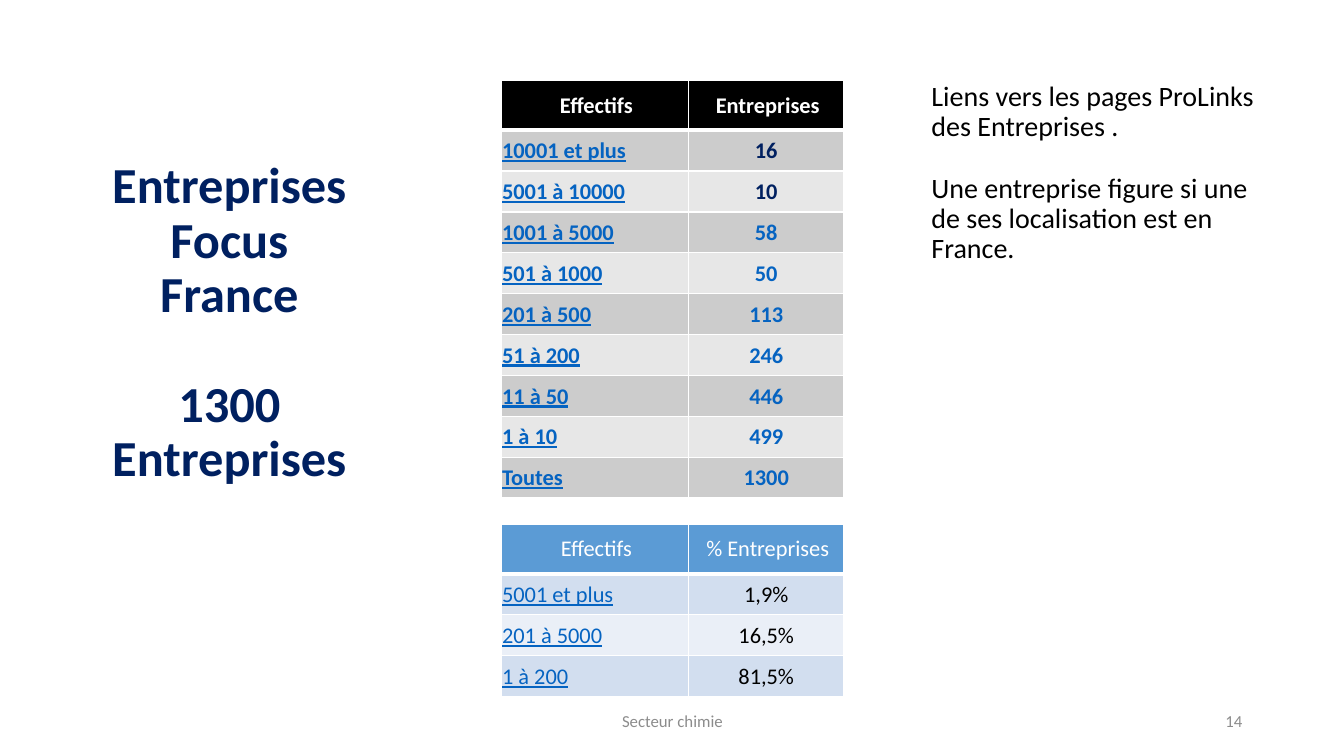
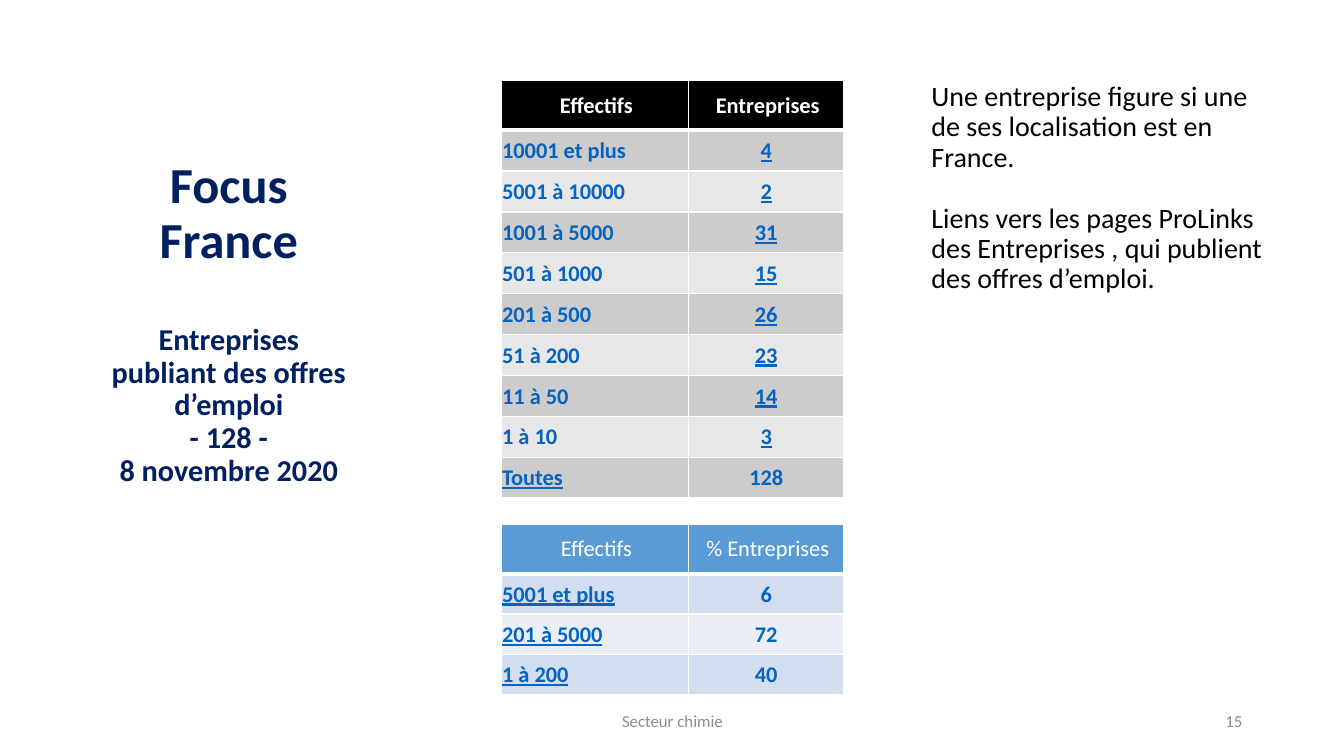
from dataclasses import dataclass

from lxml.etree import SubElement
from pptx import Presentation
from pptx.dml.color import RGBColor
from pptx.enum.text import MSO_ANCHOR as Anchor, PP_ALIGN as Align
from pptx.oxml.ns import qn
from pptx.util import Inches, Pt


@dataclass(frozen=True)
class Theme:
    font: str = "Calibri"
    navy: str = "002060"
    link: str = "0563C1"
    black: str = "000000"
    white: str = "FFFFFF"
    grey: str = "8C8C8C"
    blue: str = "5B9BD5"
    grey_bands: tuple = ("CCCCCC", "E7E7E7")
    blue_bands: tuple = ("D2DEEF", "EAEFF7")
    title: float = 36
    subtitle: float = 21.6
    body: float = 20
    table: float = 16
    footer: float = 12
    line_spacing: float = 0.9


THEME = Theme()

SIZES = ["10001 et plus", "5001 à 10000", "1001 à 5000", "501 à 1000", "201 à 500",
         "51 à 200", "11 à 50", "1 à 10", "Toutes"]
GROUPS = ["5001 et plus", "201 à 5000", "1 à 200"]
LABEL, VALUE = 0, 1  # table columns, also naming the underlined one in a row

SLIDES = [
    {
        "number": 14,
        "title": ["Entreprises", "Focus", "France"],
        "subtitle": ["1300", "Entreprises"],
        "subtitle_size": THEME.title,
        "title_box": (0.69, 1.54, 3.17, 4.77),
        "notes": ["Liens vers les pages ProLinks des Entreprises .",
                  "Une entreprise figure si une de ses localisation est en France."],
        "counts": [16, 10, 58, 50, 113, 246, 446, 499, 1300],
        "underlined": [LABEL] * 9,
        "count_colors": [THEME.navy] * 2 + [THEME.link] * 7,
        "shares": ["1,9%", "16,5%", "81,5%"],
        "share_color": THEME.black,
        "share_bold": False,
        "share_height": 1.71,
    },
    {
        "number": 15,
        "title": ["Focus", "France"],
        "subtitle": ["Entreprises", "publiant des offres d’emploi", "- 128 -",
                     "8 novembre 2020"],
        "subtitle_size": THEME.subtitle,
        "title_box": (0.46, 1.54, 3.62, 4.77),
        "notes": ["Une entreprise figure si une de ses localisation est en France.",
                  "Liens vers les pages ProLinks des Entreprises , qui publient "
                  "des offres d’emploi."],
        "counts": [4, 2, 31, 15, 26, 23, 14, 3, 128],
        "underlined": [VALUE] * 8 + [LABEL],
        "count_colors": [THEME.link] * 9,
        "shares": [6, 72, 40],
        "share_color": THEME.link,
        "share_bold": True,
        "share_height": 1.69,
    },
]

TABLE_LEFT = 4.97
COLUMN_WIDTHS = (1.86, 1.54)
HEADER_HEIGHT = 0.49
HEADER_MARGINS = (0.14, 0.11, 0.11, 0.11)
BODY_MARGINS = (0.01, 0.01, 0.01, 0)
FOOTER = "Secteur chimie"


def format_paragraph(paragraph, size, color, bold=False, underline=False, align=Align.LEFT):
    paragraph.alignment = align
    for run in paragraph.runs:
        font = run.font
        font.name, font.size = THEME.font, Pt(size)
        font.bold, font.underline = bold, underline
        font.color.rgb = RGBColor.from_string(color)


def blank_line(size):
    """Height of one empty line at the shared line spacing."""
    return Pt(round(size * 1.22 * THEME.line_spacing, 1))


def write_lines(frame, lines, **style):
    """Write (text, size, space before) lines as paragraphs."""
    frame.word_wrap = True
    frame.vertical_anchor = Anchor.TOP
    frame.text = "\n".join(text for text, _, _ in lines)
    for paragraph, (_, size, before) in zip(frame.paragraphs, lines):
        paragraph.line_spacing = THEME.line_spacing
        paragraph.space_before = before
        format_paragraph(paragraph, size, **style)


def add_title(slide, content):
    title = slide.shapes.title
    title.left, title.top, title.width, title.height = map(Inches, content["title_box"])
    lines = [(text, THEME.title, Pt(0)) for text in content["title"]]
    for index, text in enumerate(content["subtitle"]):
        before = Pt(0) if index else blank_line(THEME.title)
        lines.append((text, content["subtitle_size"], before))
    write_lines(title.text_frame, lines, color=THEME.navy, bold=True, align=Align.CENTER)


def add_notes(slide, notes):
    box = slide.shapes.add_textbox(*map(Inches, (9.14, 0.77, 3.5, 4.77)))
    lines = [(text, THEME.body, blank_line(THEME.body) if index else Pt(0))
             for index, text in enumerate(notes)]
    write_lines(box.text_frame, lines, color=THEME.black)


def add_footer(slide, number):
    for text, left, width, align in ((FOOTER, 4.42, 4.5, Align.CENTER),
                                     (str(number), 9.42, 3, Align.RIGHT)):
        box = slide.shapes.add_textbox(*map(Inches, (left, 6.95, width, 0.4)))
        frame = box.text_frame
        frame.word_wrap, frame.vertical_anchor = True, Anchor.MIDDLE
        frame.text = text
        format_paragraph(frame.paragraphs[0], THEME.footer, THEME.grey, align=align)


def set_borders(cell, bottom):
    properties = cell._tc.get_or_add_tcPr()
    widths = {"a:lnL": 1, "a:lnR": 1, "a:lnT": 1, "a:lnB": bottom}
    for index, (tag, width) in enumerate(widths.items()):
        line = SubElement(properties, qn(tag), w=str(Pt(width)))
        fill = SubElement(line, qn("a:solidFill"))
        SubElement(fill, qn("a:srgbClr"), val=THEME.white)
        properties.insert(index, line)


def fill_cell(cell, text, fill, margins, bottom=1, **style):
    cell.text = str(text)
    cell.vertical_anchor = Anchor.MIDDLE
    (cell.margin_left, cell.margin_top,
     cell.margin_right, cell.margin_bottom) = map(Inches, margins)
    cell.fill.solid()
    cell.fill.fore_color.rgb = RGBColor.from_string(fill)
    set_borders(cell, bottom)
    format_paragraph(cell.text_frame.paragraphs[0], THEME.table, **style)


def add_size_table(slide, top, height, headings, rows, header_fill, bands,
                   header_bold, body_bold):
    """Add a table of (label, value, underlined column, value colour) rows."""
    frame = slide.shapes.add_table(len(rows) + 1, len(headings), *map(
        Inches, (TABLE_LEFT, top, sum(COLUMN_WIDTHS), height)))
    table = frame.table
    for column, width in zip(table.columns, COLUMN_WIDTHS):
        column.width = Inches(width)
    for row in table.rows:
        row.height = Inches((height - HEADER_HEIGHT) / len(rows))
    table.rows[0].height = Inches(HEADER_HEIGHT)

    for column, heading in enumerate(headings):
        fill_cell(table.cell(0, column), heading, header_fill, HEADER_MARGINS, bottom=3,
                  color=THEME.white, bold=header_bold, align=Align.CENTER)
    for index, (label, value, underlined, value_color) in enumerate(rows):
        columns = ((label, THEME.link, Align.LEFT), (value, value_color, Align.CENTER))
        for column, (text, color, align) in enumerate(columns):
            fill_cell(table.cell(index + 1, column), text, bands[index % 2], BODY_MARGINS,
                      color=color, bold=body_bold, underline=column == underlined,
                      align=align)


def build_slide(presentation, content):
    slide = presentation.slides.add_slide(presentation.slide_layouts.get_by_name("Title Only"))
    add_title(slide, content)
    counts = list(zip(SIZES, content["counts"], content["underlined"],
                      content["count_colors"]))
    add_size_table(slide, 0.8, 4.14, ("Effectifs", "Entreprises"), counts,
                   THEME.black, THEME.grey_bands, header_bold=True, body_bold=True)
    shares = [(label, share, LABEL, content["share_color"])
              for label, share in zip(GROUPS, content["shares"])]
    add_size_table(slide, 5.2, content["share_height"], ("Effectifs", "% Entreprises"),
                   shares, THEME.blue, THEME.blue_bands, header_bold=False,
                   body_bold=content["share_bold"])
    add_notes(slide, content["notes"])
    add_footer(slide, content["number"])


def main():
    presentation = Presentation()
    presentation.slide_width, presentation.slide_height = Inches(13.33), Inches(7.5)
    for content in SLIDES:
        build_slide(presentation, content)
    presentation.save("out.pptx")


if __name__ == "__main__":
    main()
